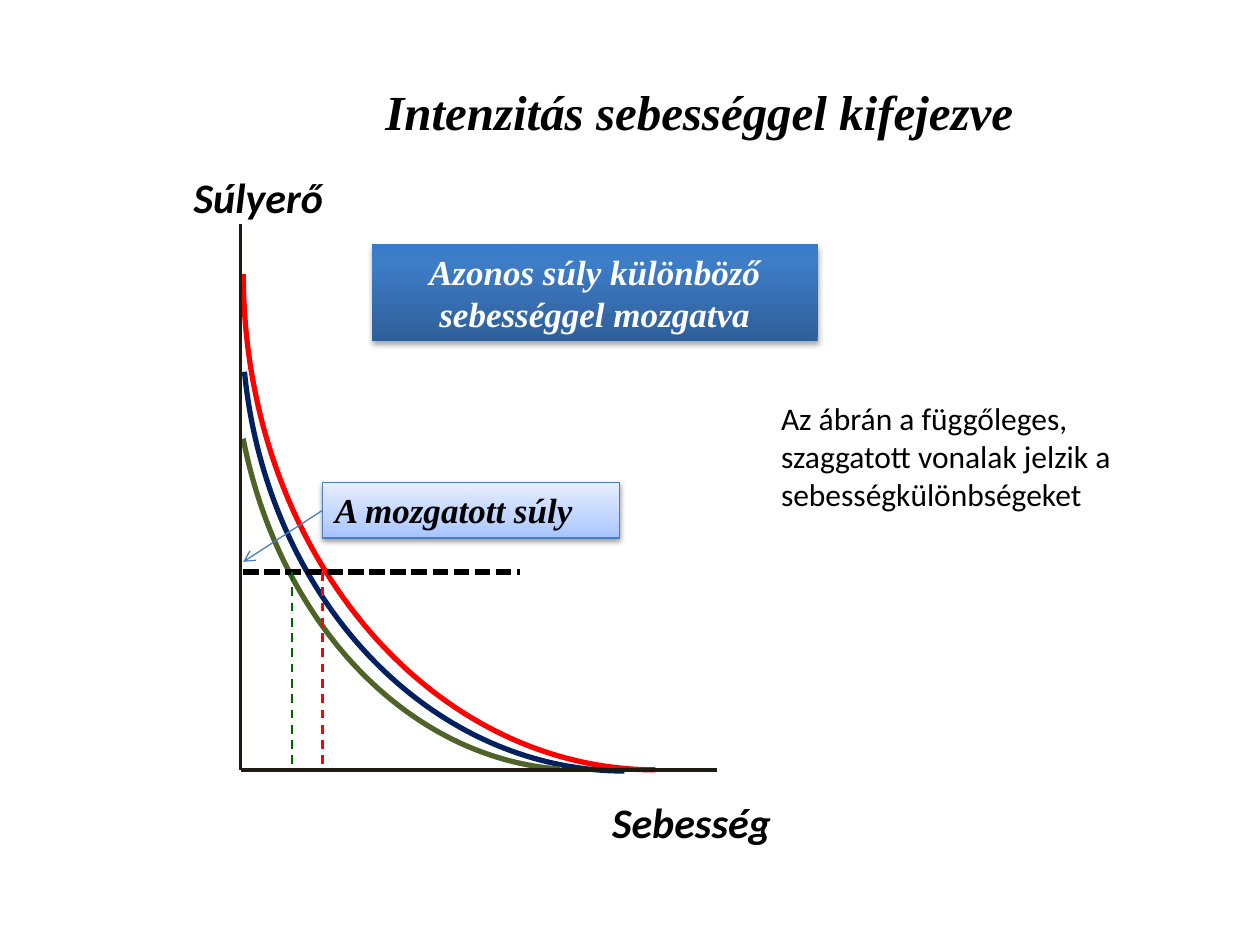
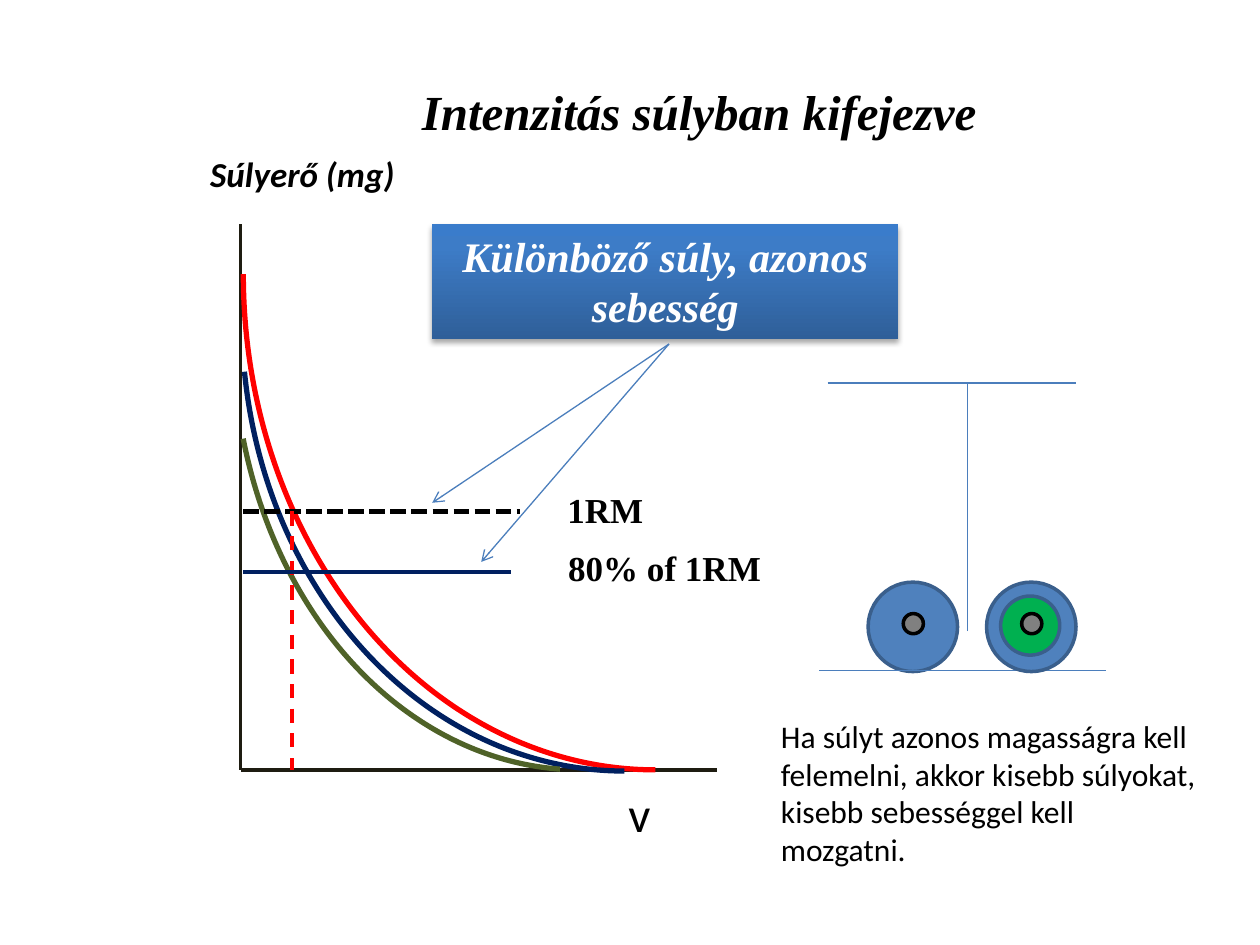
from copy import deepcopy

from lxml import etree
from pptx import Presentation
from pptx import util as u
from pptx.dml.color import RGBColor
from pptx.enum import dml, shapes, text
from pptx.oxml.ns import qn

HUES = {
    "black": "000000", "white": "FFFFFF", "axis": "1E1C11",
    "red": "FF0000", "navy": "002060", "olive": "4F6228",
    "green": "006600", "blue": "4B7EBC", "disc": "4F81BD",
    "rim": "3A5F8C", "inner": "00B050", "hub": "808080",
}
DEEP = [(0, "2F5F99"), (0.8, "3D7CC7"), (1, "3A7CCB")]
PALE = [(0, "A4C4FF"), (0.35, "BFD4FF"), (1, "E6EEFF")]
SANS, SERIF = "Calibri", "Times New Roman"
LEFT, BASE, TOP = 137.5, 439.9, 128.2
START = 139
MIDX, FARX = 167, 184.3
HIGHY, LOWY = 292.3, 326.9
DASH = dml.MSO_LINE.DASH
DOTS = dml.MSO_LINE.SQUARE_DOT
MID = text.PP_ALIGN.CENTER
CURVES = [
    ((139, -126.7, 470.9, 566.6), None, "red"),
    ((138.2, -74.9, 437, 515.5), (162, 211.348), "navy"),
    ((133.2, -57.6, 396.7, 497.5), (163.598, 205.708), "olive"),
]


def tint(name):
    return RGBColor.from_string(HUES[name])


def pts(nums):
    return [u.Pt(n) for n in nums]


def put(frame, words, size=20, font=SERIF, hue="black", bold=True,
        slant=True, align=text.PP_ALIGN.LEFT):
    frame.word_wrap = True
    frame.auto_size = text.MSO_AUTO_SIZE.SHAPE_TO_FIT_TEXT
    frame.vertical_anchor = text.MSO_ANCHOR.TOP
    para = frame.paragraphs[0]
    para.alignment = align
    run = para.add_run()
    run.text = words
    face = run.font
    face.name, face.size = font, u.Pt(size)
    face.bold, face.italic = bold, slant
    face.color.rgb = tint(hue)


def label(slide, box, words, **form):
    put(slide.shapes.add_textbox(*pts(box)).text_frame, words, **form)


def note(slide, box, words):
    label(slide, box, words, size=18, font=SANS, bold=False, slant=False)


def title(slide, words):
    head = slide.shapes.title
    head.left, head.top, head.width, head.height = pts((167, 43.2, 465.1, 41))
    put(head.text_frame, words, size=28, align=MID)


def line(slide, start, end, hue="blue", width=0.75, dash=None, arrow=False):
    item = slide.shapes.add_connector(
        shapes.MSO_CONNECTOR.STRAIGHT, *pts((*start, *end)))
    item.line.color.rgb = tint(hue)
    item.line.width = u.Pt(width)
    if dash:
        item.line.dash_style = dash
    prop = item.element.spPr
    if arrow:
        etree.SubElement(prop.get_or_add_ln(), qn("a:tailEnd"), type="arrow")
    etree.SubElement(prop, qn("a:effectLst"))


def shape(slide, kind, box, fill=None, edge=None, width=2):
    item = slide.shapes.add_shape(kind, *pts(box))
    item.shadow.inherit = False
    if fill:
        item.fill.solid()
        item.fill.fore_color.rgb = tint(fill)
    else:
        item.fill.background()
    if edge:
        item.line.color.rgb = tint(edge)
        item.line.width = u.Pt(width)
    else:
        item.line.fill.background()
    return item


def blend(item, stops):
    item.fill.gradient()
    item.fill.gradient_angle = 90
    group = item.element.spPr.find(".//" + qn("a:gsLst"))
    group.append(deepcopy(group[0]))
    for stop, (place, code) in zip(item.fill.gradient_stops, stops):
        stop.position = place
        stop.color.rgb = RGBColor.from_string(code)


def shade(item, alpha, gap):
    group = item.element.spPr.find(qn("a:effectLst"))
    cast = etree.SubElement(
        group, qn("a:outerShdw"), blurRad=str(u.Pt(3.1)),
        dist=str(u.Pt(gap)), dir="5400000", rotWithShape="0")
    color = etree.SubElement(cast, qn("a:srgbClr"), val=HUES["black"])
    etree.SubElement(color, qn("a:alpha"), val=str(alpha * 1000))


def panel(slide, box, words, stops, alpha=35, gap=1.8, edge=None, **form):
    item = shape(slide, shapes.MSO_SHAPE.RECTANGLE, box, edge=edge, width=0.75)
    blend(item, stops)
    shade(item, alpha, gap)
    put(item.text_frame, words, **form)


def banner(slide, box, words, size):
    panel(slide, box, words, DEEP, size=size, hue="white", align=MID)


def axes(slide):
    for end in ((LEFT, TOP), (409.7, BASE)):
        line(slide, (LEFT, BASE), end, "axis", 2)


def curves(slide):
    for box, span, hue in CURVES:
        arc = shape(slide, shapes.MSO_SHAPE.ARC, box, edge=hue, width=3)
        arc.rotation = 180
        if span:
            arc.adjustments[0], arc.adjustments[1] = span


def level(slide, y):
    line(slide, (START, y), (297.4, y), "black", 3, DOTS)


def drop(slide, x, y, hue, width):
    line(slide, (x, y), (x, BASE), hue, width, DASH)


def ring(slide, x, y, size, fill, edge):
    box = (x - size / 2, y - size / 2, size, size)
    shape(slide, shapes.MSO_SHAPE.OVAL, box, fill, edge)


def plate(slide, x, inner=False):
    ring(slide, x, 358.2, 51.1, "disc", "rim")
    if inner:
        ring(slide, x - 0.6, 357.5, 33.8, "inner", "rim")
    ring(slide, x + 0.3, 356.4, 11.5, "hub", "black")


def speed(slide):
    title(slide, "Intenzitás sebességgel kifejezve")
    curves(slide)
    axes(slide)
    label(slide, (342.7, 451.4, 113, 36), "Sebesség", size=24, font=SANS)
    label(slide, (99.4, 94.3, 96.5, 36), "Súlyerő", size=24, font=SANS,
          align=MID)
    level(slide, LOWY)
    panel(slide, (FARX, 275.8, 169.9, 31.7), "A mozgatott súly", PALE,
          alpha=38, gap=1.6, edge="blue")
    drop(slide, FARX, LOWY, "red", 1.25)
    drop(slide, MIDX, LOWY, "green", 1.25)
    banner(slide, (212.4, 139.7, 254.9, 55.4),
           "Azonos súly különböző sebességgel mozgatva", 20)
    line(slide, (FARX, 291.6), (START, 321.1), arrow=True)
    note(slide, (439.2, 224.6, 244.1, 72.7),
         "Az ábrán a függőleges, szaggatott vonalak jelzik a "
         "sebességkülönbségeket")


def weight(slide):
    title(slide, "Intenzitás súlyban kifejezve")
    axes(slide)
    curves(slide)
    level(slide, HIGHY)
    label(slide, (342.7, 444.2, 45.4, 41), "v", size=28, font=SANS,
          bold=False, slant=False, align=MID)
    label(slide, (314.6, 275.8, 62.6, 31.7), "1RM", slant=False, align=MID)
    drop(slide, MIDX, HIGHY, "red", 2)
    line(slide, (START, LOWY), (292.3, LOWY), "navy", 2)
    label(slide, (82.1, 83.5, 181.4, 31.7), "Súlyerő (mg)", font=SANS,
          align=MID)
    label(slide, (314.6, 308.9, 130.3, 31.7), "80% of 1RM", slant=False,
          align=MID)
    plate(slide, 521.6)
    line(slide, (468, 383), (632.2, 383))
    plate(slide, 589.3, inner=True)
    line(slide, (553, 360.7), (553, 218.9))
    banner(slide, (247, TOP, 266.4, 65.5), "Különböző súly, azonos sebesség",
           24)
    line(slide, (473, 218.9), (614.9, 218.9))
    for tip in ((247, 287.3), (275, 321.1)):
        line(slide, (382.3, 196.6), tip, arrow=True)
    note(slide, (439.2, 406.1, 254.9, 94.3),
         "Ha súlyt azonos magasságra kell felemelni, akkor kisebb súlyokat, "
         "kisebb sebességgel kell mozgatni.")


def main():
    deck = Presentation()
    deck.slide_width, deck.slide_height = pts((720, 540))
    for build in (speed, weight):
        build(deck.slides.add_slide(deck.slide_layouts[5]))
    deck.save("out.pptx")


if __name__ == "__main__":
    main()
